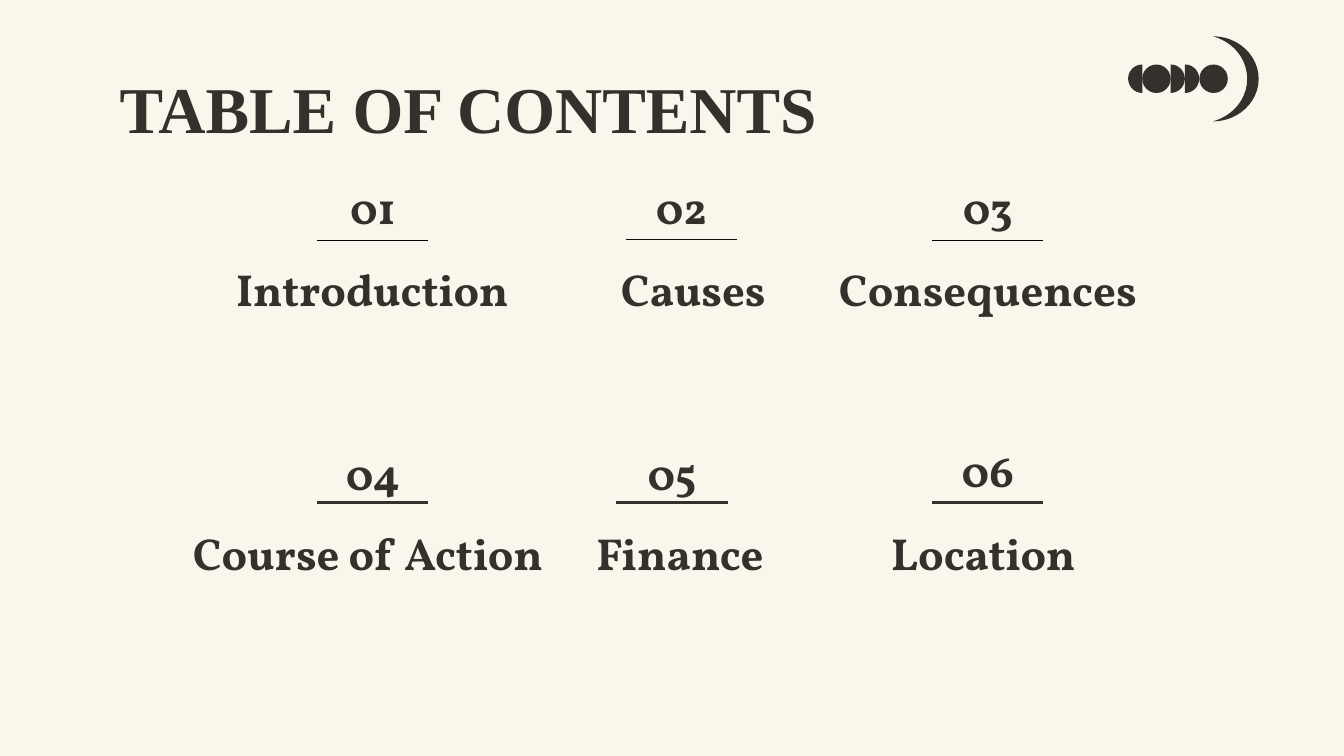
from math import cos, pi, sin
from lxml import etree
from pptx import Presentation
from pptx import util as u
from pptx.dml import color
from pptx.enum import shapes, text
from pptx.oxml import ns

COLORS = {"paper": "FBF6EB", "ink": "34302B", "black": "000000", "soot": "0F0F0F"}
RGB = {name: color.RGBColor.from_string(value) for name, value in COLORS.items()}

prs = Presentation()
prs.slide_width = u.Inches(10)
prs.slide_height = prs.slide_width * 9 // 16
col, row = prs.slide_width / 100, prs.slide_height / 100
s = prs.slides.add_slide(prs.slide_layouts[5])
s.background.fill.solid()
s.background.fill.fore_color.rgb = RGB["paper"]


def write(sp, box, content, align, font):
    x, y, w, h = box
    sp.left, sp.top, sp.width, sp.height = int(x * col), int(y * row), int(w * col), int(h * row)
    tf = sp.text_frame
    frame = {"word_wrap": True, "auto_size": text.MSO_AUTO_SIZE.NONE, "vertical_anchor": text.MSO_ANCHOR.MIDDLE}
    frame.update({f"margin_{side}": u.Inches(0.1) for side in ("left", "right", "top", "bottom")})
    for key, value in frame.items():
        setattr(tf, key, value)
    p = tf.paragraphs[0]
    p.alignment = align
    r = p.add_run()
    r.text = content
    for key, value in font.items():
        setattr(r.font, key, value)
    r.font.color.rgb = RGB["ink"]


def paint(sp):
    sp.shadow.inherit = False
    sp.fill.solid()
    sp.fill.fore_color.rgb = RGB["ink"]
    sp.line.fill.background()


write(s.shapes.title, (7.9, 8.65, 84.3, 11.2), "TABLE OF CONTENTS", text.PP_ALIGN.LEFT,
      {"name": "Times New Roman", "size": u.Pt(35), "bold": True})

entry_font = {"name": "Vollkorn", "size": u.Pt(24), "bold": True}
number_tops, name_tops = (21.55, 56.75), (34.85, 69.7)
entries = [
    ("01", "Introduction", 0, 27.75, 27.7, 38.8, 0, 31.8, "black", 0.75),
    ("02", " Causes", 0, 50.7, 51.25, 27.9, 0, 31.65, "soot", 0.75),
    ("03", "Consequences", 0, 73.5, 73.5, 38.8, 0, 31.8, "black", 0.75),
    ("04", "Course of Action ", 1, 27.75, 27.7, 38.8, 0, 66.5, "ink", 1.5),
    ("05", "Finance", 1, 50, 50.6, 38.8, 0, 66.5, "ink", 1.5),
    ("06", "Location ", 1, 73.5, 73.5, 38.8, -0.4, 66.5, "ink", 1.5),
]
for number, name, band, center, name_center, name_w, shift, rule_y, rule_color, weight in entries:
    labels = [
        (number, (center - 3.25, number_tops[band] + shift, 6.5, 11.55)),
        (name, (name_center - name_w / 2, name_tops[band], name_w, 6.75)),
    ]
    for content, box in labels:
        write(s.shapes.add_textbox(0, 0, 0, 0), box, content, text.PP_ALIGN.CENTER, entry_font)
    rule = s.shapes.add_connector(shapes.MSO_CONNECTOR.STRAIGHT, int((center - 4.13) * col), int(rule_y * row),
                                  int((center + 4.13) * col), int(rule_y * row))
    rule.line.color.rgb = RGB[rule_color]
    rule.line.width = u.Pt(weight)
    etree.SubElement(rule._element.spPr, ns.qn("a:effectLst"))

radius = 1.06 * col
phase_y = 10.42 * row
for center in (86.05, 90.3):
    disc = s.shapes.add_shape(shapes.MSO_SHAPE.OVAL, int(center * col - radius), int(phase_y - radius),
                              int(2 * radius), int(2 * radius))
    paint(disc)

for flat_x, side in ((85, -1), (87.1, 1), (88.17, 1)):
    arc = [(flat_x * col + side * radius * cos(a), phase_y + radius * sin(a))
           for a in (pi * (i / 24 - 0.5) for i in range(25))]
    pen = s.shapes.build_freeform(int(arc[0][0]), int(arc[0][1]))
    pen.add_line_segments([(int(x), int(y)) for x, y in arc[1:]], close=True)
    paint(pen.convert_to_shape())

crescent = s.shapes.add_shape(shapes.MSO_SHAPE.MOON, int(90.25 * col), int(4.8 * row), int(3.4 * col), int(11.25 * row))
crescent.adjustments[0] = 0.25
crescent.rotation = 180
paint(crescent)

prs.save("out.pptx")
